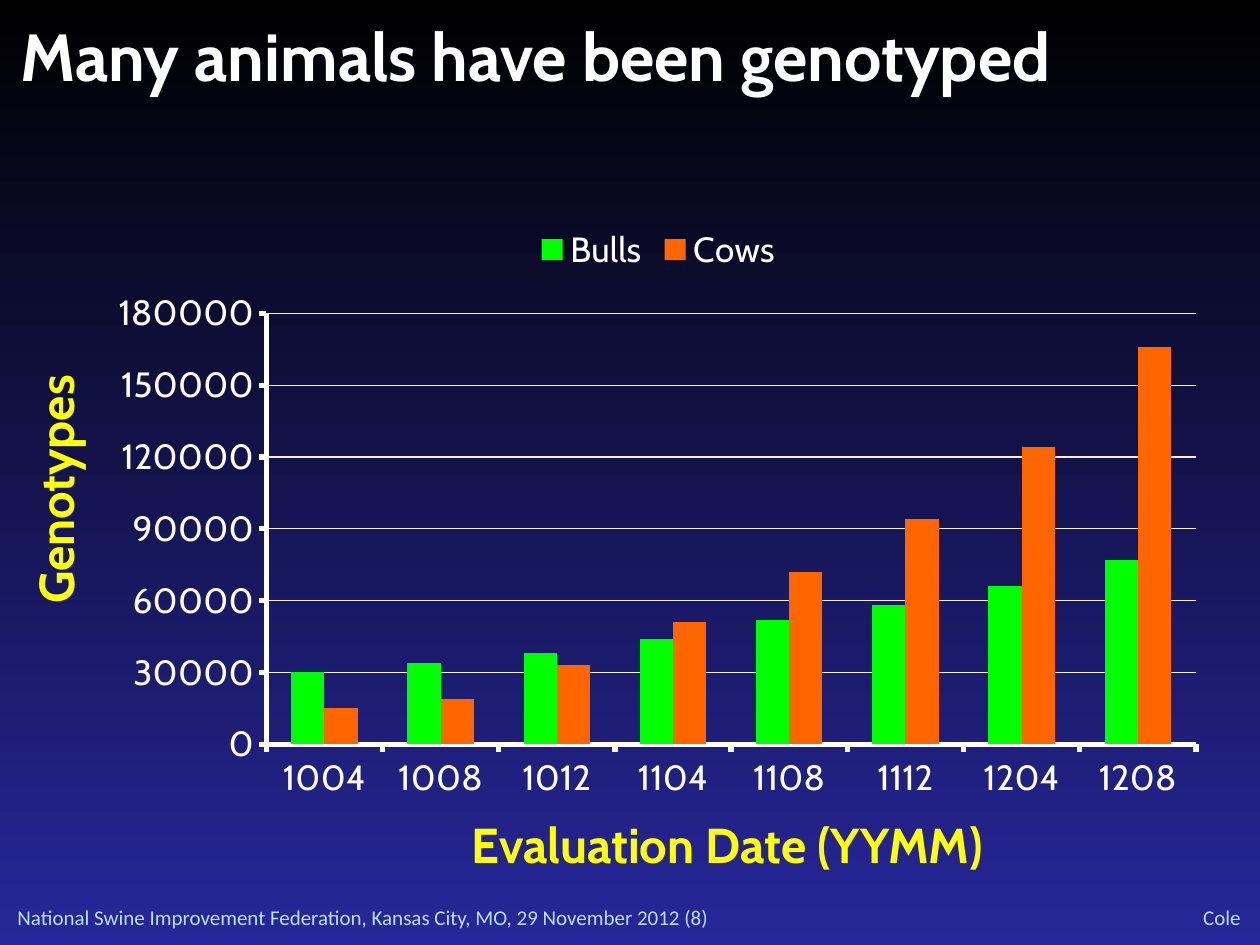
from lxml import etree
from pptx import Presentation
from pptx.chart.data import CategoryChartData
from pptx.dml.color import RGBColor
from pptx.enum import chart as ch, text as tx
from pptx.oxml.ns import qn
from pptx.util import Pt

BLACK = RGBColor(0x00, 0x00, 0x00)
NAVY = RGBColor(0x27, 0x27, 0x9B)
WHITE = RGBColor(0xFF, 0xFF, 0xFF)
PALE_GRAY = RGBColor(0xF2, 0xF2, 0xF2)
PALE_BLUE = RGBColor(0xB8, 0xE2, 0xFF)
YELLOW = RGBColor(0xFF, 0xFF, 0x00)
GREEN = RGBColor(0x00, 0xFF, 0x00)
ORANGE = RGBColor(0xFF, 0x66, 0x00)

LEFT, CENTER, RIGHT = tx.PP_ALIGN.LEFT, tx.PP_ALIGN.CENTER, tx.PP_ALIGN.RIGHT
TOP, MIDDLE = tx.MSO_ANCHOR.TOP, tx.MSO_ANCHOR.MIDDLE

HEADLINE = "Many animals have been genotyped"
DATES = ["1004", "1008", "1012", "1104", "1108", "1112", "1204", "1208"]
GENOTYPES = [
    ("Bulls", GREEN, [30000, 34000, 38000, 44000, 52000, 58000, 66000, 77000]),
    ("Cows", ORANGE, [15000, 19000, 33000, 51000, 72000, 94000, 124000, 166000]),
]
AXIS_STYLE = dict(font="Cabin", size=28, color=YELLOW, bold=True, align=CENTER)
FOOTER_STYLE = dict(font="Calibri", size=12, color=PALE_BLUE, anchor=MIDDLE, inset=0)
LABELS = [
    ("National Swine Improvement Federation, Kansas City, MO, 29 November 2012 (8)",
     (10, 517, 628, 14.4), 0, dict(FOOTER_STYLE, align=LEFT)),
    ("Cole", (628, 516.3, 81, 15), 0, dict(FOOTER_STYLE, align=RIGHT)),
    ("Evaluation Date (YYMM)", (237.6, 462.2, 355.7, 41), 0, AXIS_STYLE),
    ("Genotypes", (-125.3, 259.2, 314, 41), 270, AXIS_STYLE),
]
CHART_BOX = (56.2, 121, 640, 342)
PLOT_SHARE = {"x": 0.15, "y": 0.17, "w": 0.83, "h": 0.72}


def place(shape, box):
    shape.left, shape.top, shape.width, shape.height = map(Pt, box)


def write(shape, words, font, size, color, align, bold=False, anchor=TOP, inset=None):
    frame = shape.text_frame
    frame.word_wrap = True
    frame.auto_size = tx.MSO_AUTO_SIZE.NONE
    frame.vertical_anchor = anchor
    if inset is not None:
        frame.margin_left = frame.margin_right = Pt(inset)
        frame.margin_top = frame.margin_bottom = Pt(inset)
    paragraph = frame.paragraphs[0]
    paragraph.alignment = align
    run = paragraph.add_run()
    run.text = words
    style_font(run.font, font, size, color, bold)


def style_font(font, name, size, color, bold=False):
    font.name, font.size, font.bold = name, Pt(size), bold
    font.color.rgb = color


def fix_plot_area(chart):
    plot_area = chart.plots[0]._element.getparent()
    for old in plot_area.findall(qn("c:layout")):
        plot_area.remove(old)
    layout = etree.Element(qn("c:layout"))
    manual = etree.SubElement(layout, qn("c:manualLayout"))
    settings = [("layoutTarget", "inner"), ("xMode", "edge"), ("yMode", "edge")]
    for tag, value in settings + list(PLOT_SHARE.items()):
        etree.SubElement(manual, qn("c:" + tag)).set("val", str(value))
    plot_area.insert(0, layout)


def add_genotype_chart(slide):
    counts = CategoryChartData()
    counts.categories = DATES
    for name, _, values in GENOTYPES:
        counts.add_series(name, values)
    chart = slide.shapes.add_chart(
        ch.XL_CHART_TYPE.COLUMN_CLUSTERED, *map(Pt, CHART_BOX), counts).chart
    style_font(chart.font, "Cabin", 20, WHITE)
    chart.has_title = False
    chart.has_legend = True
    chart.legend.position = ch.XL_LEGEND_POSITION.TOP
    chart.legend.include_in_layout = False
    style_font(chart.legend.font, "Cabin", 20, WHITE)

    columns = chart.plots[0]
    columns.gap_width, columns.overlap = 150, 0
    columns.vary_by_categories = False
    for series, (_, color, _) in zip(columns.series, GENOTYPES):
        series.format.fill.solid()
        series.format.fill.fore_color.rgb = color
        series.invert_if_negative = False

    for axis in (chart.category_axis, chart.value_axis):
        axis.major_tick_mark = ch.XL_TICK_MARK.OUTSIDE
        axis.minor_tick_mark = ch.XL_TICK_MARK.NONE
        axis.format.line.color.rgb = WHITE
        axis.format.line.width = Pt(3)
        style_font(axis.tick_labels.font, "Cabin", 20, WHITE)
    scale = chart.value_axis
    scale.minimum_scale, scale.maximum_scale, scale.major_unit = 0, 180000, 30000
    scale.has_major_gridlines = True
    scale.major_gridlines.format.line.color.rgb = PALE_GRAY
    scale.major_gridlines.format.line.width = Pt(0.75)
    fix_plot_area(chart)


def main():
    deck = Presentation()
    deck.slide_width, deck.slide_height = Pt(720), Pt(540)
    slide = deck.slides.add_slide(deck.slide_layouts[5])

    backdrop = slide.background.fill
    backdrop.gradient()
    backdrop.gradient_angle = 270
    for stop, color, position in zip(backdrop.gradient_stops, (BLACK, NAVY), (0, 1)):
        stop.color.rgb, stop.position = color, position

    title = slide.shapes.title
    place(title, (11.5, 8.6, 695.5, 46))
    write(title, HEADLINE, "Cabin", 38, WHITE, LEFT, bold=True, inset=0)
    add_genotype_chart(slide)
    for words, box, rotation, style in LABELS:
        label = slide.shapes.add_textbox(*map(Pt, box))
        label.rotation = rotation
        write(label, words, **style)
    deck.save("out.pptx")


if __name__ == "__main__":
    main()
